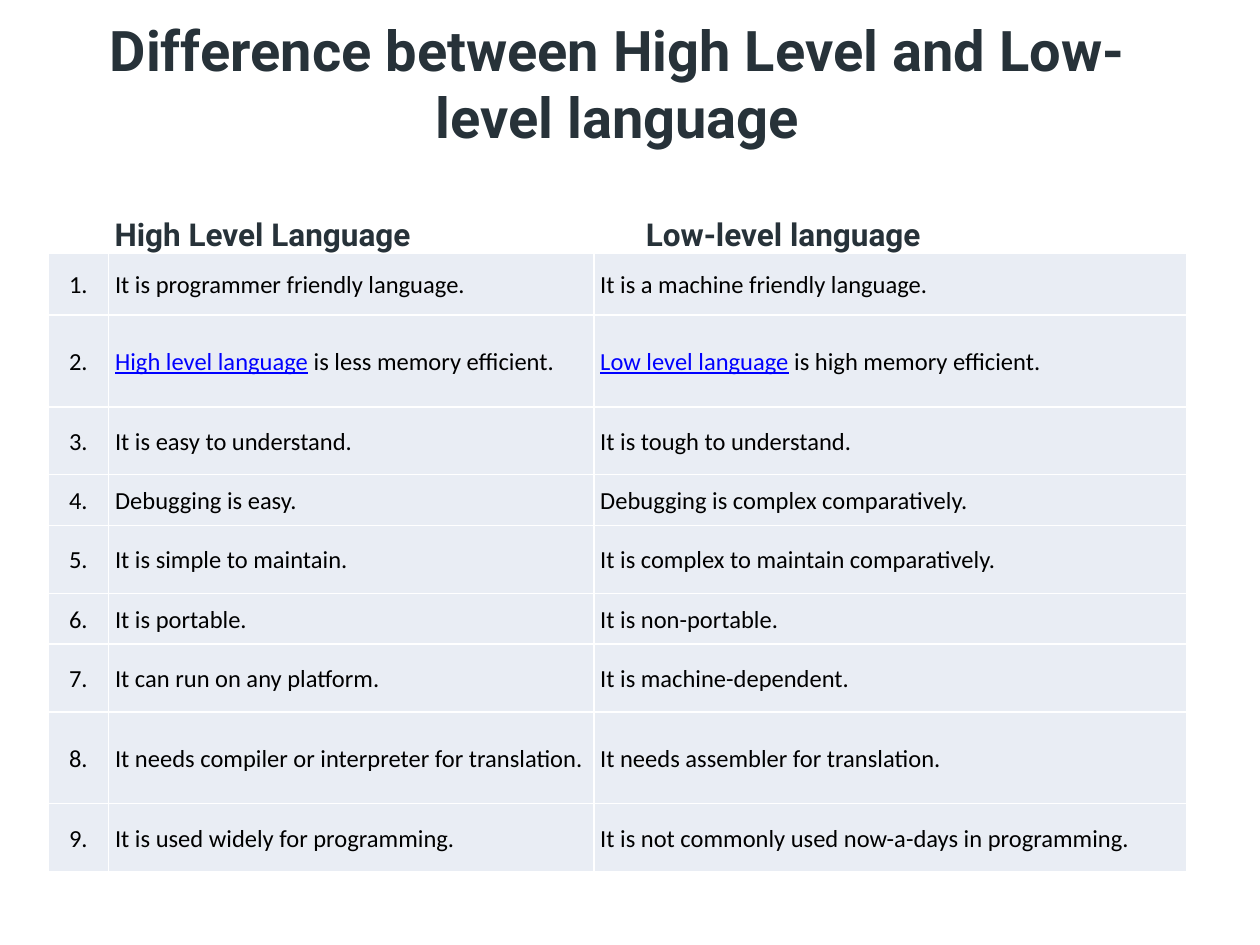
"""Build a slide comparing high-level and low-level languages."""
from lxml import etree
from pptx import Presentation
from pptx import util as u
from pptx.dml.color import RGBColor
from pptx.enum import text
from pptx.oxml import ns

SLATE = RGBColor(0x27, 0x32, 0x39)
BLACK = RGBColor(0x00, 0x00, 0x00)
LINK = RGBColor(0x00, 0x00, 0xFF)
WHITE = RGBColor(0xFF, 0xFF, 0xFF)
PALE = RGBColor(0xE9, 0xED, 0xF4)

COLUMNS = [1.22, 9.78, 11.96]
ROWS = [
    (1.24, ["It is programmer friendly language."], ["It is a machine friendly language."]),
    (1.85, ["High level language", " is less memory efficient."],
     ["Low level language", " is high memory efficient."]),
    (1.37, ["It is easy to understand."], ["It is tough to understand."]),
    (1.02, ["Debugging is easy."], ["Debugging is complex comparatively."]),
    (1.37, ["It is simple to maintain."], ["It is complex to maintain comparatively."]),
    (1.02, ["It is portable."], ["It is non-portable."]),
    (1.37, ["It can run on any platform."], ["It is machine-dependent."]),
    (1.85, ["It needs compiler or interpreter for translation."],
     ["It needs assembler for translation."]),
    (1.37, ["It is used widely for programming."],
     ["It is not commonly used now-a-days in programming."]),
]


class Deck:
    """Hold the slide and its style, and add each kind of element."""

    heading_font = "Roboto"
    body_font = "Calibri"
    body_size = 14
    body_spacing = 1.07

    def __init__(self, slide):
        self.s = slide

    def run(self, p, words, font, size, color, bold=False, underline=False):
        r = p.add_run()
        r.text = words
        f = r.font
        f.name, f.size, f.bold, f.underline = font, u.Pt(size), bold, underline
        f.color.rgb = color

    def heading(self, box, words, size, align, spacing=1.0, tab=None):
        sp = self.s.shapes.add_textbox(*map(u.Cm, box))
        tf = sp.text_frame
        tf.word_wrap = True
        tf.vertical_anchor = text.MSO_ANCHOR.MIDDLE
        tf.margin_left = tf.margin_right = u.Cm(0.18)
        tf.margin_top = tf.margin_bottom = u.Cm(0.1)
        p = tf.paragraphs[0]
        p.alignment, p.line_spacing = align, spacing
        if tab:
            tabs = etree.SubElement(p._p.get_or_add_pPr(), ns.qn("a:tabLst"))
            etree.SubElement(tabs, ns.qn("a:tab"), pos=str(u.Cm(tab)), algn="l")
        self.run(p, words, self.heading_font, size, SLATE, bold=True)

    def borders(self, cell):
        tc_pr = cell._tc.get_or_add_tcPr()
        for side in ("lnL", "lnR", "lnT", "lnB"):
            ln = etree.SubElement(tc_pr, ns.qn(f"a:{side}"), w=str(u.Pt(1)))
            fill = etree.SubElement(ln, ns.qn("a:solidFill"))
            etree.SubElement(fill, ns.qn("a:srgbClr"), val=str(WHITE))

    def cell(self, cell, runs, align, side, edge):
        self.borders(cell)
        cell.fill.solid()
        cell.fill.fore_color.rgb = PALE
        cell.vertical_anchor = text.MSO_ANCHOR.MIDDLE
        cell.margin_left = cell.margin_right = u.Cm(side)
        cell.margin_top = cell.margin_bottom = u.Cm(edge)
        p = cell.text_frame.paragraphs[0]
        p.alignment, p.line_spacing = align, self.body_spacing
        for i, words in enumerate(runs):
            linked = i < len(runs) - 1
            self.run(p, words, self.body_font, self.body_size,
                     LINK if linked else BLACK, underline=linked)

    def table(self, left, top, columns, rows):
        height = sum(row[0] for row in rows)
        box = map(u.Cm, (left, top, sum(columns), height))
        table = self.s.shapes.add_table(len(rows), len(columns), *box).table
        table.first_row = table.horz_banding = False
        for column, width in zip(table.columns, columns):
            column.width = u.Cm(width)
        for i, (row_height, high, low) in enumerate(rows):
            table.rows[i].height = u.Cm(row_height)
            number_edge, text_edge = (0.08, 0.18) if i else (0.13, 0.13)
            self.cell(table.cell(i, 0), [f"{i + 1}."], text.PP_ALIGN.CENTER, 0.08, number_edge)
            for j, runs in enumerate((high, low), 1):
                self.cell(table.cell(i, j), runs, text.PP_ALIGN.LEFT, 0.13, text_edge)


def main():
    prs = Presentation()
    prs.slide_width, prs.slide_height = u.Cm(25.4), u.Cm(19.05)
    deck = Deck(prs.slides.add_slide(prs.slide_layouts[6]))
    deck.heading((0.97, 0.99, 22.96, 1.35), "Difference between High Level and Low-level language",
                 32, text.PP_ALIGN.CENTER)
    deck.table(0.97, 5.11, COLUMNS, ROWS)
    deck.heading((2.13, 4.09, 20.24, 1.35), "High Level Language\tLow-level language",
                 18, text.PP_ALIGN.LEFT, spacing=0.9, tab=10.71)
    prs.save("out.pptx")


if __name__ == "__main__":
    main()
